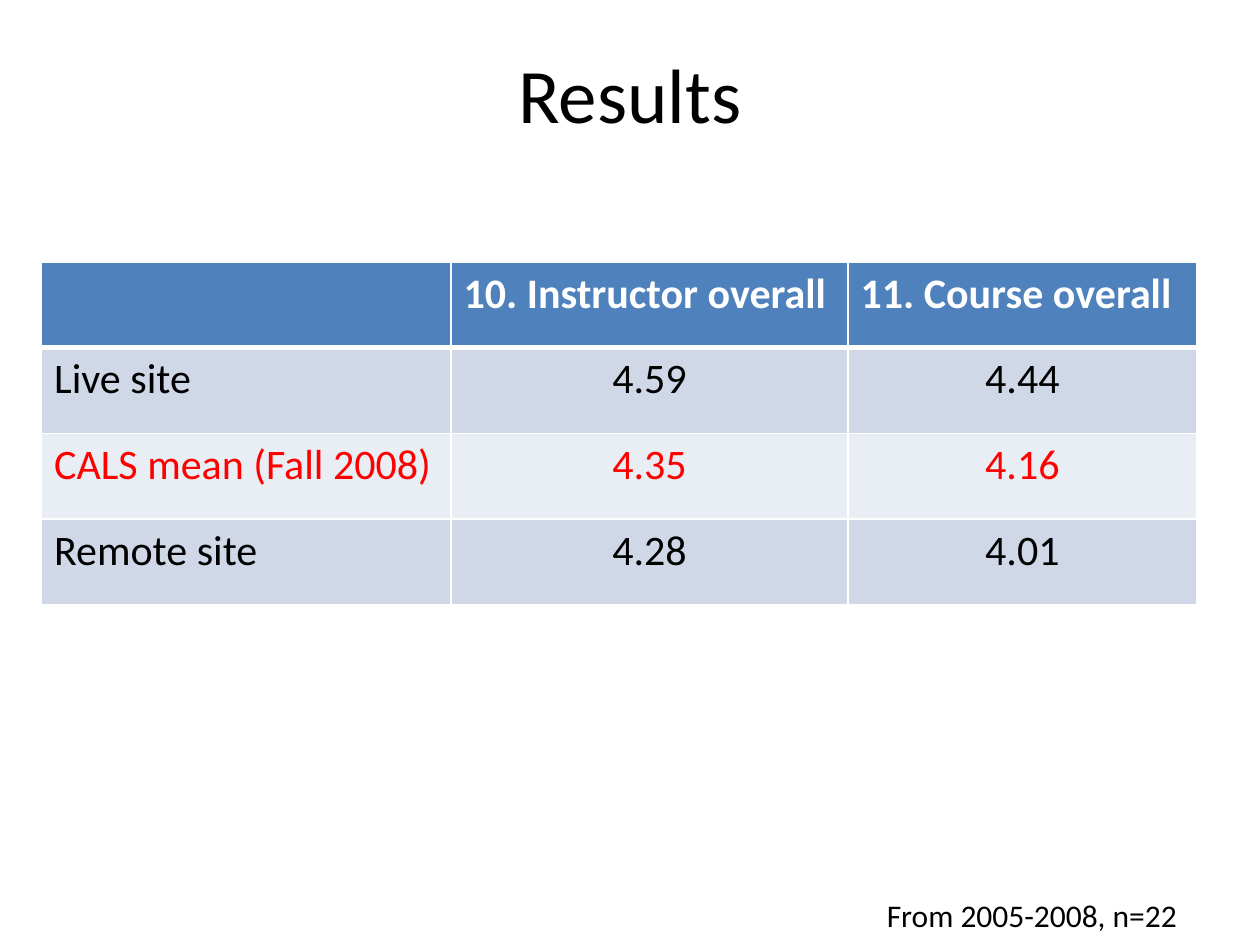
import pptx
import pptx.util
import pptx.dml.color
import pptx.enum.text
import pptx.oxml
import pptx.oxml.ns

Inches = pptx.util.Inches
Align = pptx.enum.text.PP_ALIGN
Anchor = pptx.enum.text.MSO_ANCHOR
WIDE, HIGH = 10, 7.5
HUES = {
    "ink": "000000", "alert": "FF0000", "paper": "FFFFFF",
    "head": "4F81BD", "odd": "D0D8E8", "even": "E9EDF4",
}
ROWS = [
    ("", "10. Instructor overall", "11. Course overall"),
    ("Live site", "4.59", "4.44"),
    ("CALS mean (Fall 2008)", "4.35", "4.16"),
    ("Remote site", "4.28", "4.01"),
]
COLS = (3.25, 3.15, 2.77)


def tint(name):
    """Return the named colour."""
    return pptx.dml.color.RGBColor.from_string(HUES[name])


def write(frame, text, size=24, hue="ink", bold=False, align=Align.LEFT):
    """Put one formatted paragraph into a text frame."""
    para = frame.paragraphs[0]
    para.text = text
    para.alignment = align
    para.font.size = pptx.util.Pt(size)
    para.font.name = "Calibri"
    para.font.bold = bold
    para.font.color.rgb = tint(hue)


def place(shape, box):
    """Move a shape to a box of left, top, width and height."""
    shape.left, shape.top, shape.width, shape.height = map(Inches, box)


def edge(cell, base):
    """Draw the four borders of a cell, with its own bottom width."""
    props = cell._tc.get_or_add_tcPr()
    sides = (("L", 1), ("R", 1), ("T", 1), ("B", base))
    for spot, (side, width) in enumerate(sides):
        props.insert(spot, pptx.oxml.parse_xml(
            f'<a:ln{side} {pptx.oxml.ns.nsdecls("a")} w="{width * 12700}">'
            f'<a:solidFill><a:srgbClr val="{HUES["paper"]}"/></a:solidFill>'
            f'</a:ln{side}>'))


def title(slide, box):
    """Fill the title placeholder."""
    shape = slide.shapes.title
    place(shape, box)
    shape.text_frame.vertical_anchor = Anchor.MIDDLE
    write(shape.text_frame, "Results", size=44, align=Align.CENTER)


def scores(slide, box):
    """Add the table of mean scores."""
    frame = slide.shapes.add_table(len(ROWS), len(COLS), *map(Inches, box))
    table = frame.table
    for col, share in zip(table.columns, COLS):
        col.width = Inches(box[2] * share / sum(COLS))
    for r, row in enumerate(ROWS):
        fill = "head" if r == 0 else "odd" if r % 2 else "even"
        hue = "paper" if r == 0 else "alert" if r == 2 else "ink"
        for c, text in enumerate(row):
            cell = table.cell(r, c)
            cell.fill.solid()
            cell.fill.fore_color.rgb = tint(fill)
            edge(cell, 1 if r else 3)
            align = Align.CENTER if r and c else Align.LEFT
            write(cell.text_frame, text, hue=hue, bold=r == 0, align=align)


def source(slide, box):
    """Add the sample note in the lower right corner."""
    frame = slide.shapes.add_textbox(*map(Inches, box)).text_frame
    frame.word_wrap = True
    write(frame, "From 2005-2008, n=22", size=18)


def main():
    """Build and save the slide."""
    deck = pptx.Presentation()
    deck.slide_width, deck.slide_height = Inches(WIDE), Inches(HIGH)
    slide = deck.slides.add_slide(deck.slide_layouts[5])
    title(slide, (WIDE * 0.05, HIGH * 0.04, WIDE * 0.9, 0.87))
    scores(slide, (0.33, 2.08, sum(COLS), 0.68 * len(ROWS)))
    source(slide, (WIDE - 3.06, HIGH - 0.44, 3.06, 0.44))
    deck.save("out.pptx")


if __name__ == "__main__":
    main()
